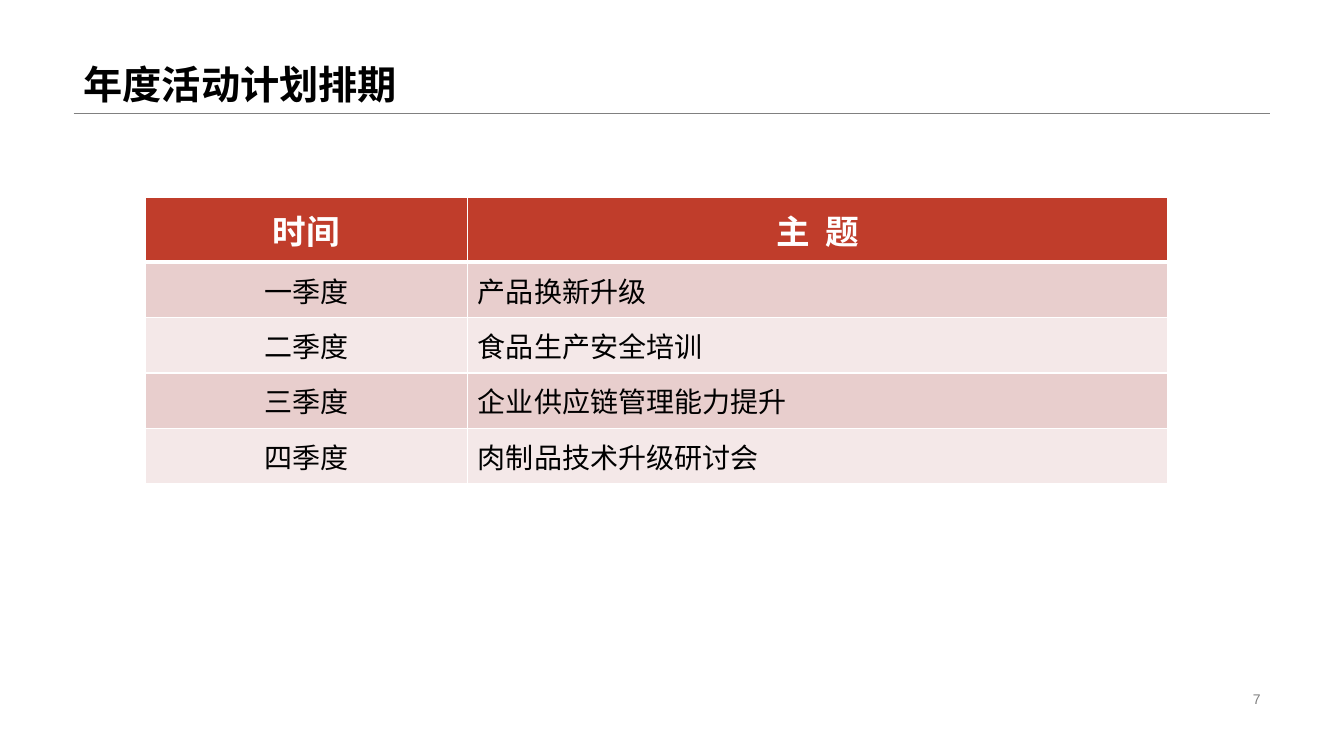
from lxml import etree
from pptx import Presentation
from pptx.dml.color import RGBColor
from pptx.enum.shapes import MSO_CONNECTOR
from pptx.enum.text import MSO_ANCHOR, PP_ALIGN
from pptx.oxml.ns import qn
from pptx.util import Inches, Pt

TITLE = "年度活动计划排期"
PAGE_NUMBER = "7"
SCHEDULE = [
    ("时间", "主  题"),
    ("一季度", "产品换新升级"),
    ("二季度", "食品生产安全培训"),
    ("三季度", "企业供应链管理能力提升"),
    ("四季度", "肉制品技术升级研讨会"),
]
COLUMN_WIDTHS = (3.2, 6.94)
HEADER_HEIGHT, ROW_HEIGHT = 0.64, 0.55
TABLE_LEFT, TABLE_TOP = 1.44, 1.96
MARGIN, CONTENT_WIDTH, RULE_TOP = 0.73, 11.87, 1.12

COLORS = {
    "black": "000000",
    "white": "FFFFFF",
    "gray": "808080",
    "header": "C03D2B",
    "odd_row": "E8CECD",
    "even_row": "F4E8E8",
}
FONTS = {
    "title": {"size": Pt(28), "bold": True, "color": "black"},
    "header": {"size": Pt(24), "bold": True, "color": "white"},
    "body": {"size": Pt(20), "bold": False, "color": "black"},
    "page": {"size": Pt(10), "bold": False, "color": "gray"},
}


def color(name):
    return RGBColor.from_string(COLORS[name])


def write(text_frame, text, style, alignment, anchor):
    text_frame.vertical_anchor = anchor
    text_frame.word_wrap = True
    paragraph = text_frame.paragraphs[0]
    paragraph.alignment = alignment
    run = paragraph.add_run()
    run.text = text
    run.font.name = "Arial"
    for name, value in FONTS[style].items():
        if name == "color":
            run.font.color.rgb = color(value)
        else:
            setattr(run.font, name, value)
    return paragraph


def set_borders(cell, widths):
    properties = cell._tc.get_or_add_tcPr()
    for position, (side, width) in enumerate(widths.items()):
        line = etree.Element(qn(f"a:ln{side}"), w=str(Pt(width)))
        fill = etree.SubElement(line, qn("a:solidFill"))
        etree.SubElement(fill, qn("a:srgbClr"), val=COLORS["white"])
        properties.insert(position, line)


def add_heading(slide):
    rule = slide.shapes.add_connector(
        MSO_CONNECTOR.STRAIGHT, Inches(MARGIN), Inches(RULE_TOP),
        Inches(MARGIN + CONTENT_WIDTH), Inches(RULE_TOP))
    rule.line.color.rgb = color("gray")
    rule.line.width = Pt(0.25)
    etree.SubElement(rule._element.spPr, qn("a:effectLst"))

    title = slide.shapes.title
    title.left, title.top = Inches(MARGIN), Inches(0)
    title.width, title.height = Inches(CONTENT_WIDTH), Inches(RULE_TOP)
    paragraph = write(title.text_frame, TITLE, "title", PP_ALIGN.LEFT, MSO_ANCHOR.BOTTOM)
    paragraph.line_spacing = 0.9


def add_schedule(slide):
    height = HEADER_HEIGHT + ROW_HEIGHT * (len(SCHEDULE) - 1)
    table = slide.shapes.add_table(
        len(SCHEDULE), len(COLUMN_WIDTHS), Inches(TABLE_LEFT), Inches(TABLE_TOP),
        Inches(sum(COLUMN_WIDTHS)), Inches(height)).table
    for column, width in zip(table.columns, COLUMN_WIDTHS):
        column.width = Inches(width)
    for row_index, texts in enumerate(SCHEDULE):
        is_header = row_index == 0
        table.rows[row_index].height = Inches(HEADER_HEIGHT if is_header else ROW_HEIGHT)
        row_fill = "header" if is_header else "odd_row" if row_index % 2 else "even_row"
        borders = {"L": 1, "R": 1, "T": 3 if row_index == 1 else 1, "B": 3 if is_header else 1}
        for column_index, text in enumerate(texts):
            cell = table.cell(row_index, column_index)
            cell.fill.solid()
            cell.fill.fore_color.rgb = color(row_fill)
            set_borders(cell, borders)
            centered = is_header or column_index == 0
            write(cell.text_frame, text, "header" if is_header else "body",
                  PP_ALIGN.CENTER if centered else PP_ALIGN.LEFT, MSO_ANCHOR.MIDDLE)
            cell.vertical_anchor = MSO_ANCHOR.MIDDLE


def add_page_number(slide):
    box = slide.shapes.add_textbox(Inches(9.42), Inches(6.82), Inches(3.18), Inches(0.23))
    write(box.text_frame, PAGE_NUMBER, "page", PP_ALIGN.RIGHT, MSO_ANCHOR.MIDDLE)


def main():
    presentation = Presentation()
    presentation.slide_width = Inches(13.33)
    presentation.slide_height = Inches(7.5)
    slide = presentation.slides.add_slide(presentation.slide_layouts[5])
    add_heading(slide)
    add_schedule(slide)
    add_page_number(slide)
    presentation.save("out.pptx")


if __name__ == "__main__":
    main()
